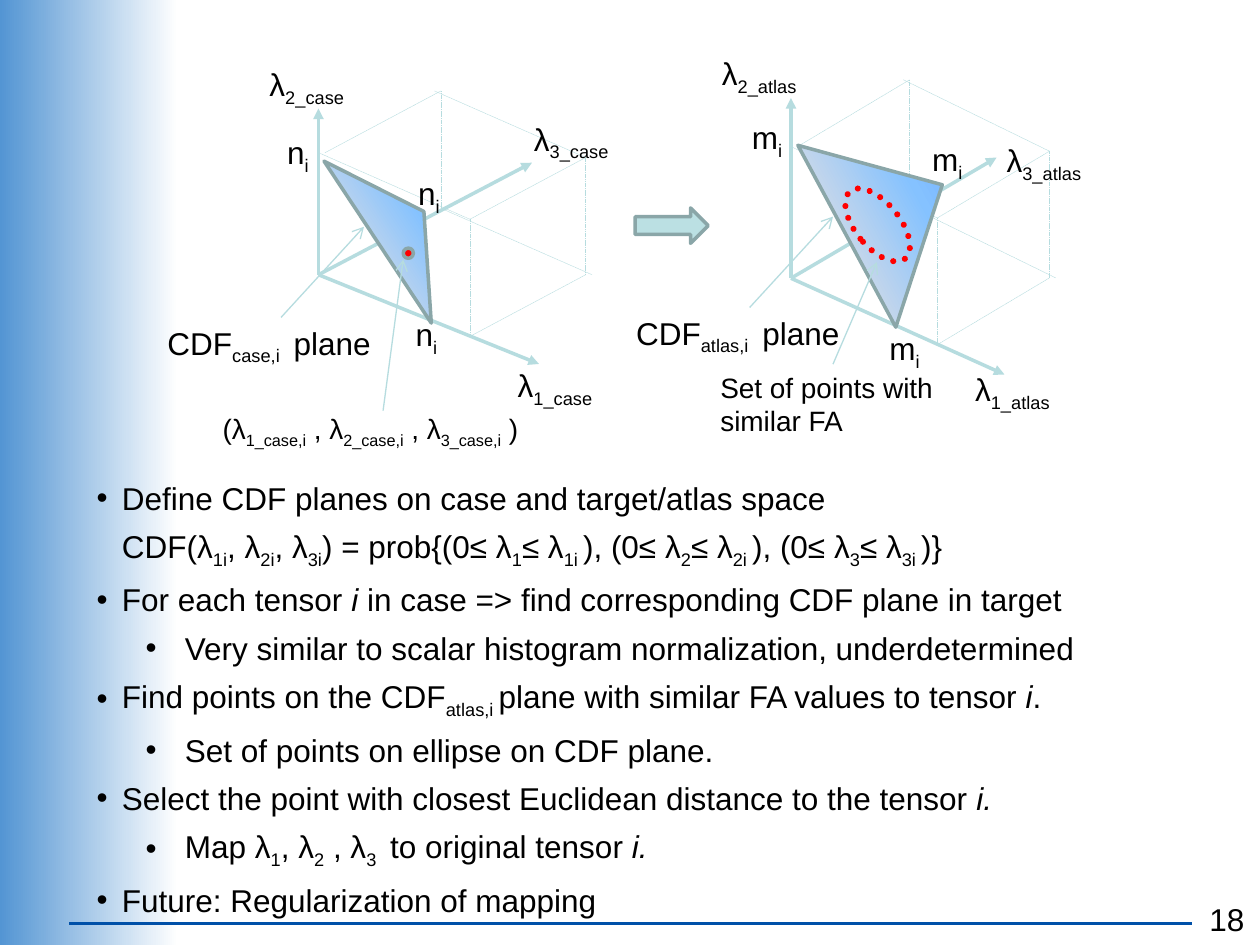
from lxml.etree import SubElement
from pptx import Presentation
from pptx.dml.color import RGBColor
from pptx.enum.dml import MSO_LINE
from pptx.enum.shapes import MSO_CONNECTOR, MSO_SHAPE
from pptx.enum.text import MSO_AUTO_SIZE
from pptx.oxml.ns import qn
from pptx.util import Pt

COLORS = {
    "text": "000000", "rule": "0050A8", "axis": "B6DCDF", "outline": "8AA6A8",
    "arrow": "BBE0E3", "dot": "FF0000",
}
SIDEBAR_STOPS = [(0, "5395D3"), (100, "FFFFFF")]
PLANE_STOPS = [(0, "5E9EFF"), (40, "85C2FF"), (70, "C4D6EB"), (100, "FFEBFA")]
FONT = "Arial"
NUDGE = 3.6

DIAGRAMS = [
    {
        "corner": (268.5, 125.3), "slant": (86.4, 38), "depth": (66.2, -35.3), "drop": 67,
        "origin": (182, 157), "tips": [(304, 93), (308, 208), (182, 62)],
        "plane": (173.5, 113.8, 111, 31.7), "turn": 56.5,
    },
    {
        "corner": (535.6, 124.6), "slant": (83.5, 40.8), "depth": (64.1, -38.2), "drop": 72.4,
        "origin": (452, 159), "tips": [(569.5, 90), (574, 214), (452, 56)],
        "plane": (452.2, 89.3, 118, 62), "turn": 61.7,
    },
]

LABELS = [
    ("λ~2_atlas~", 405.4, 27.4, 70.6, 18),
    ("λ~1_case~", 288.7, 205.9, 70.6, 18),
    ("λ~3_case~", 298, 64.8, 70.6, 18),
    ("λ~2_case~", 146.9, 33.8, 70.6, 18),
    ("n~i~", 230.4, 176.4, 35.3, 18),
    ("n~i~", 231.8, 95.8, 35.3, 18),
    ("n~i~", 157, 72.7, 35.3, 18),
    ("m~i~", 501.1, 184.3, 35.3, 18),
    ("m~i~", 525.6, 76.3, 35.3, 18),
    ("m~i~", 422.6, 64.1, 35.3, 18),
    ("λ~3_atlas~", 568.1, 77, 70.6, 18),
    ("λ~1_atlas~", 550.1, 208.1, 70.6, 18),
    ("CDF~case,i ~ plane", 88.6, 181.4, 144.7, 18),
    ("CDF~atlas,i ~ plane", 356.4, 175.7, 144.7, 18),
    ("(λ~1_case,i~ , λ~2_case,i~ , λ~3_case,i~ )", 120.2, 231.8, 213.8, 16),
    ("Set of points with similar FA", 404.6, 208.1, 163.4, 16),
]
POINTERS = [
    ((160.6, 181.4), (208, 129.6)),
    ((218.9, 234.7), (230.4, 148.3)),
    ((428.4, 175.7), (476, 123.8)),
    ((476, 208.1), (501.1, 149.8)),
]
BODY = [
    (0, True, "Define CDF planes on case and target/atlas space"),
    (0, False, "CDF(λ~1i~, λ~2i~, λ~3i~) = prob{(0≤ λ~1~≤ λ~1i ~), "
               "(0≤ λ~2~≤ λ~2i ~), (0≤ λ~3~≤ λ~3i ~)}"),
    (0, True, "For each tensor ^i ^in case => find corresponding CDF plane in target"),
    (1, True, "Very similar to scalar histogram normalization, underdetermined"),
    (0, True, "Find points on the CDF~atlas,i ~plane with similar FA values to tensor ^i^."),
    (1, True, "Set of points on ellipse on CDF plane."),
    (0, True, "Select the point with closest Euclidean distance to the tensor ^i.^"),
    (1, True, "Map λ~1~, λ~2~ , λ~3 ~ to original tensor ^i.^"),
    (0, True, "Future: Regularization of mapping"),
]


def color(name):
    return RGBColor.from_string(COLORS[name])


def add_line(page, start, end, width, name="axis", dash=None, head=None):
    line = page.shapes.add_connector(
        MSO_CONNECTOR.STRAIGHT, *(Pt(value) for value in (*start, *end)))
    line.line.color.rgb = color(name)
    line.line.width = Pt(width)
    if dash:
        line.line.dash_style = dash
    if head:
        SubElement(line.line._get_or_add_ln(), qn("a:tailEnd"), type=head)
    SubElement(line._element.spPr, qn("a:effectLst"))


def add_figure(page, kind, frame, fill=None, outline=None, width=2, turn=0):
    figure = page.shapes.add_shape(kind, *(Pt(value) for value in frame))
    figure.shadow.inherit = False
    figure.rotation = turn
    if fill:
        figure.fill.solid()
        figure.fill.fore_color.rgb = color(fill)
    else:
        figure.fill.background()
    if outline:
        figure.line.color.rgb = color(outline)
        figure.line.width = Pt(width)
    else:
        figure.line.fill.background()
    return figure


def set_gradient(figure, stops, angle):
    figure.fill.gradient()
    gradient = figure._element.spPr.find(qn("a:gradFill"))
    for child in list(gradient):
        gradient.remove(child)
    gradient.set("rotWithShape", "1")
    stop_list = SubElement(gradient, qn("a:gsLst"))
    for position, value in stops:
        stop = SubElement(stop_list, qn("a:gs"), pos=str(position * 1000))
        SubElement(stop, qn("a:srgbClr"), val=value)
    SubElement(gradient, qn("a:lin"), ang=str(angle * 60000), scaled="0")


def add_spans(paragraph, text, size):
    for index, part in enumerate(text.split("~")):
        for turn, piece in enumerate(part.split("^")):
            if not piece:
                continue
            span = paragraph.add_run()
            span.text = piece
            span.font.name = FONT
            span.font.size = Pt(size)
            span.font.color.rgb = color("text")
            if turn % 2:
                span.font.italic = True
            if index % 2:
                span._r.get_or_add_rPr().set("baseline", "-25000")


def add_box(page, left, top, width, height, wrap=True):
    box = page.shapes.add_textbox(Pt(left), Pt(top), Pt(width), Pt(height))
    box.text_frame.word_wrap = wrap
    box.text_frame.auto_size = MSO_AUTO_SIZE.SHAPE_TO_FIT_TEXT
    return box.text_frame


def add_diagram(page, corner, slant, depth, drop, origin, tips, plane, turn):
    def shift(point, step, sign=1):
        return point[0] + sign * step[0], point[1] + sign * step[1]

    down, aside = (0, drop), (NUDGE, 0)
    right = shift(corner, depth)
    left = shift(corner, slant, -1)
    back = shift(right, slant, -1)
    top = shift(back, aside)
    low_right = shift(right, down)
    edges = [
        (corner, shift(corner, down)), (right, low_right), (left, corner),
        (corner, right), (shift(corner, down), low_right),
        (shift(top, down), shift(low_right, aside)),
        (top, shift(top, down)), (back, right), (shift(left, aside), top),
    ]
    for start, end in edges:
        add_line(page, start, end, 0.25, dash=MSO_LINE.SQUARE_DOT)
    for tip in tips:
        add_line(page, origin, tip, 2, head="triangle")
    triangle = add_figure(page, MSO_SHAPE.ISOSCELES_TRIANGLE, plane, None, "outline", turn=turn)
    set_gradient(triangle, PLANE_STOPS, 90)


def add_body(page):
    frame = add_box(page, 48.2, 270, 630, 252)
    for index, (level, bullet, text) in enumerate(BODY):
        paragraph = frame.paragraphs[0] if index == 0 else frame.add_paragraph()
        paragraph.level = level
        paragraph.space_after = Pt(6)
        properties = paragraph._p.get_or_add_pPr()
        properties.set("marL", str(Pt(14.4 + 36 * level)))
        properties.set("indent", str(Pt(-22.5 if bullet else 0)))
        if bullet:
            SubElement(properties, qn("a:buFont"), typeface=FONT)
            SubElement(properties, qn("a:buChar"), char="•")
        add_spans(paragraph, text, 18)


def main():
    deck = Presentation()
    deck.slide_width, deck.slide_height = Pt(720), Pt(540)
    page = deck.slides.add_slide(deck.slide_layouts[6])
    sidebar = add_figure(page, MSO_SHAPE.RECTANGLE, (0, 0, 102, 540))
    set_gradient(sidebar, SIDEBAR_STOPS, 0)
    add_line(page, (39.6, 527.8), (681, 527.8), 2, "rule")
    number = add_box(page, 684, 510.5, 36.7, 28.8, wrap=False)
    add_spans(number.paragraphs[0], "18", 18)
    for diagram in DIAGRAMS:
        add_diagram(page, **diagram)
    add_figure(page, MSO_SHAPE.RIGHT_ARROW, (362.9, 118.8, 41.8, 20.2), "arrow", "outline")
    ellipse = add_figure(page, MSO_SHAPE.OVAL, (488.9, 103.7, 25.2, 49.7), None, "dot", 3.5, 320.9)
    ellipse.line.dash_style = MSO_LINE.ROUND_DOT
    ellipse.line._get_or_add_ln().set("cap", "rnd")
    add_figure(page, MSO_SHAPE.OVAL, (230.4, 141.8, 5.8, 5.8), "dot", "outline")
    for text, left, top, width, size in LABELS:
        add_spans(add_box(page, left, top, width, 28.8).paragraphs[0], text, size)
    for start, end in POINTERS:
        add_line(page, start, end, 0.75, head="arrow")
    add_body(page)
    deck.save("out.pptx")


if __name__ == "__main__":
    main()
